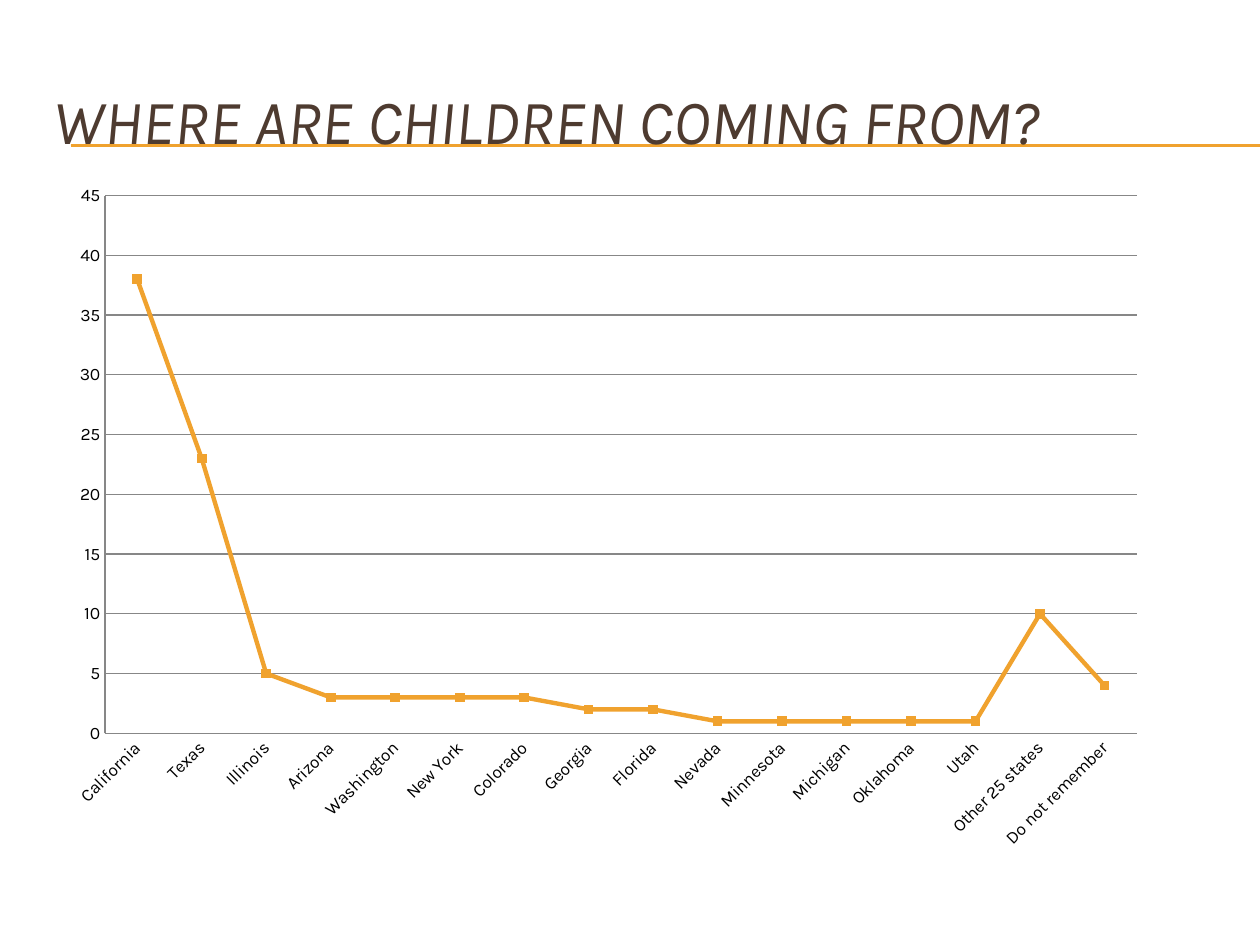
"""Build a slide with a line chart of the states children are coming from."""
from dataclasses import dataclass

from lxml import etree
from pptx import Presentation
from pptx import util as u
from pptx.chart.data import CategoryChartData
from pptx.dml.color import RGBColor
from pptx.enum import chart as charts, shapes, text
from pptx.oxml import ns

COLORS = {"accent": "F0A22E", "heading": "4E3B30", "grid": "878787", "label": "000000"}
FONT = "Karla"
PLOT_AREA = {"x": 0.036, "y": 0.015, "w": 0.912, "h": 0.776}


@dataclass(frozen=True)
class Origin:
    place: str
    share: int


@dataclass(frozen=True)
class Rule:
    top: float
    left: float = 0.56
    right: float = 10


ORIGINS = [
    Origin("California", 38), Origin("Texas", 23),
    Origin("Illinois", 5), Origin("Arizona", 3),
    Origin("Washington", 3), Origin("New York", 3),
    Origin("Colorado", 3), Origin("Georgia", 2),
    Origin("Florida", 2), Origin("Nevada", 1),
    Origin("Minnesota", 1), Origin("Michigan", 1),
    Origin("Oklahoma", 1), Origin("Utah", 1),
    Origin("Other 25 states", 10), Origin("Do not remember", 4),
]
RULES = [Rule(1.15), Rule(1.16)]


def color(name: str) -> RGBColor:
    return RGBColor.from_string(COLORS[name])


def apply(target, values: dict) -> None:
    for attribute, value in values.items():
        setattr(target, attribute, value)


def style_line(line, name: str, width: float) -> None:
    line.color.rgb = color(name)
    line.width = u.Pt(width)


def draw_rule(slide, rule: Rule) -> None:
    underline = slide.shapes.add_connector(
        shapes.MSO_CONNECTOR.STRAIGHT, u.Inches(rule.left), u.Inches(rule.top),
        u.Inches(rule.right), u.Inches(rule.top))
    style_line(underline.line, "accent", 0.75)
    etree.SubElement(underline._element.spPr, ns.qn("a:effectLst"))


def draw_heading(slide, wording: str) -> None:
    heading = slide.shapes.add_textbox(
        u.Inches(0.33), u.Inches(0.49), u.Inches(9.5), u.Inches(0.92))
    apply(heading.text_frame, {
        "word_wrap": True, "vertical_anchor": text.MSO_ANCHOR.MIDDLE})
    run = heading.text_frame.paragraphs[0].add_run()
    run.text = wording
    apply(run.font, {"name": FONT, "size": u.Pt(36), "italic": True})
    run.font.color.rgb = color("heading")


def place_plot(chart) -> None:
    plot_area = chart._chartSpace.chart.plotArea
    for previous in plot_area.findall(ns.qn("c:layout")):
        plot_area.remove(previous)
    layout = etree.Element(ns.qn("c:layout"))
    plot_area.insert(0, layout)
    manual = etree.SubElement(layout, ns.qn("c:manualLayout"))
    settings = {"layoutTarget": "inner", "xMode": "edge", "yMode": "edge", **PLOT_AREA}
    for tag, value in settings.items():
        etree.SubElement(manual, ns.qn(f"c:{tag}")).set("val", str(value))


def draw_origins(slide, origins: list[Origin]) -> None:
    shares = CategoryChartData()
    shares.categories = [origin.place for origin in origins]
    shares.add_series("Series 1", [origin.share for origin in origins])
    chart = slide.shapes.add_chart(
        charts.XL_CHART_TYPE.LINE_MARKERS, u.Inches(0.51), u.Inches(1.47),
        u.Inches(8.98), u.Inches(5.5), shares).chart
    apply(chart, {"has_legend": False, "has_title": False})
    apply(chart.font, {"name": FONT, "size": u.Pt(10)})
    chart.font.color.rgb = color("label")
    place_plot(chart)

    places, scale = chart.category_axis, chart.value_axis
    for axis in (places, scale):
        apply(axis, {
            "major_tick_mark": charts.XL_TICK_MARK.NONE,
            "minor_tick_mark": charts.XL_TICK_MARK.NONE})
        style_line(axis.format.line, "grid", 0.75)
    apply(scale, {"minimum_scale": 0, "maximum_scale": 45, "major_unit": 5,
                  "has_major_gridlines": True})
    apply(scale.tick_labels, {"number_format": "0", "number_format_is_linked": False})
    style_line(scale.major_gridlines.format.line, "grid", 0.75)
    places.has_major_gridlines = False
    places.tick_labels.font.size = u.Pt(10)
    label_body = places._element.find(ns.qn("c:txPr"))
    label_body.find(ns.qn("a:bodyPr")).set("rot", "-2700000")

    chart.plots[0].vary_by_categories = False
    trend = chart.plots[0].series[0]
    trend.smooth = False
    style_line(trend.format.line, "accent", 2.5)
    apply(trend.marker, {"style": charts.XL_MARKER_STYLE.SQUARE, "size": 5})
    trend.marker.format.fill.solid()
    trend.marker.format.fill.fore_color.rgb = color("accent")
    style_line(trend.marker.format.line, "accent", 0.75)


def main() -> None:
    deck = Presentation()
    apply(deck, {"slide_width": u.Inches(10), "slide_height": u.Inches(7.5)})
    slide = deck.slides.add_slide(deck.slide_layouts[6])
    for rule in RULES:
        draw_rule(slide, rule)
    draw_heading(slide, "WHERE ARE CHILDREN COMING FROM?")
    draw_origins(slide, ORIGINS)
    deck.save("out.pptx")


if __name__ == "__main__":
    main()
